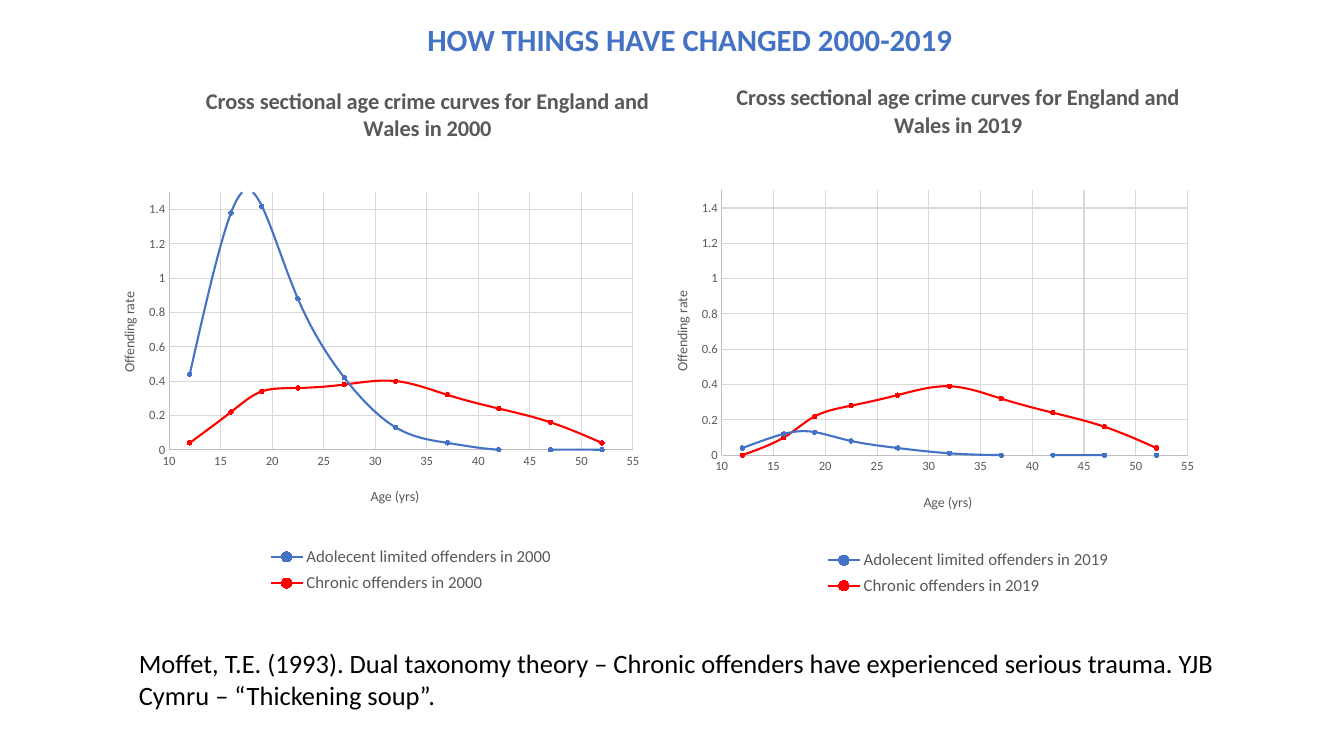
from dataclasses import dataclass

from pptx import Presentation
from pptx.chart.data import XyChartData
from pptx.dml.color import RGBColor
from pptx.enum.chart import XL_CHART_TYPE, XL_LEGEND_POSITION, XL_MARKER_STYLE, XL_TICK_MARK
from pptx.oxml import parse_xml
from pptx.oxml.ns import nsdecls
from pptx.util import Cm, Pt

SMOOTH_SCATTER = XL_CHART_TYPE.XY_SCATTER_SMOOTH
LEGEND_BOTTOM = XL_LEGEND_POSITION.BOTTOM
CIRCLE = XL_MARKER_STYLE.CIRCLE
NO_TICK = XL_TICK_MARK.NONE

FONT = "Calibri"
BLUE, RED, BLACK = "4472C4", "FF0000", "000000"
GREY, AXIS_GREY, GRID_GREY = "595959", "BFBFBF", "D9D9D9"
AGES = (12, 16, 19, 22.5, 27, 32, 37, 42, 47, 52)


@dataclass
class AgeCrimeChart:
    """Box is in cm; the layouts are fractions of the chart area."""
    year: int
    box: tuple
    adolescent: tuple
    chronic: tuple
    plot: tuple
    title: tuple
    age_title: tuple
    rate_title: tuple
    legend: tuple


@dataclass
class TextBox:
    text: str
    box: tuple
    size: float
    color: str
    bold: bool = False
    space_after: float = 0


CHARTS = (
    AgeCrimeChart(
        2000, (2.34, 1.78, 14.45, 13.46),
        (0.44, 1.38, 1.42, 0.88, 0.42, 0.13, 0.04, 0, 0, 0),
        (0.04, 0.22, 0.34, 0.36, 0.38, 0.4, 0.32, 0.24, 0.16, 0.04),
        plot=(0.133, 0.228, 0.809, 0.482), title=(0.19, 0.02),
        age_title=(0.48, 0.775), rate_title=(0.043, 0.41),
        legend=(0.295, 0.88, 0.52, 0.11)),
    AgeCrimeChart(
        2019, (15.93, 1.7, 14.86, 13.59),
        (0.04, 0.12, 0.13, 0.08, 0.04, 0.01, 0, 0, 0, 0),
        (0, 0.1, 0.22, 0.28, 0.34, 0.39, 0.32, 0.24, 0.16, 0.04),
        plot=(0.152, 0.228, 0.79, 0.491), title=(0.17, 0.02),
        age_title=(0.49, 0.784), rate_title=(0.065, 0.41),
        legend=(0.31, 0.885, 0.52, 0.105)),
)
SOURCE = TextBox(
    "Moffet, T.E. (1993). Dual taxonomy theory – Chronic offenders have experienced "
    "serious trauma. YJB Cymru – “Thickening soup”.",
    (3.25, 16.18, 28.3, 1.88), 18.9, BLACK, space_after=6)
HEADING = TextBox("HOW THINGS HAVE CHANGED 2000-2019",
                  (10.52, 0.41, 14.86, 1.19), 22, BLUE, bold=True)


def rgb(color: str) -> RGBColor:
    return RGBColor.from_string(color)


def set_font(font, size: float, color: str, bold: bool = False) -> None:
    font.name = FONT
    font.size = Pt(size)
    font.bold = bold
    font.color.rgb = rgb(color)


def set_line(fmt, color: str, width: float) -> None:
    fmt.line.color.rgb = rgb(color)
    fmt.line.width = Pt(width)


def set_layout(element, layout: tuple, inner: bool = False) -> None:
    """Place a chart part by x, y and, where given, width and height."""
    for old in element.xpath("c:layout"):
        element.remove(old)
    target = '<c:layoutTarget val="inner"/>' if inner else ""
    modes = '<c:xMode val="edge"/><c:yMode val="edge"/>'
    sizes = "".join(f'<c:{k} val="{v}"/>' for k, v in zip("xywh", layout))
    new = parse_xml(f'<c:layout {nsdecls("c")}><c:manualLayout>{target}{modes}{sizes}'
                    '</c:manualLayout></c:layout>')
    overlay = element.xpath("c:overlay")
    if overlay:
        overlay[0].addprevious(new)
    else:
        element.insert(0, new)


def set_title(title, text: str, size: float, layout: tuple, bold: bool = False) -> None:
    r = title.text_frame.paragraphs[0].add_run()
    r.text = text
    set_font(r.font, size, GREY, bold)
    set_layout(title.element, layout)


def style_axis(axis, title: str, layout: tuple, low: float, high: float, step: float) -> None:
    axis.minimum_scale, axis.maximum_scale, axis.major_unit = low, high, step
    axis.major_tick_mark = axis.minor_tick_mark = NO_TICK
    axis.has_major_gridlines = True
    set_line(axis.major_gridlines.format, GRID_GREY, 0.75)
    set_line(axis.format, AXIS_GREY, 0.75)
    labels = axis.tick_labels
    labels.number_format, labels.number_format_is_linked = "General", False
    set_font(labels.font, 9, GREY)
    set_title(axis.axis_title, title, 10, layout)


def add_age_crime_chart(s, c: AgeCrimeChart) -> None:
    data = XyChartData()
    for group, rates in (("Adolecent limited", c.adolescent), ("Chronic", c.chronic)):
        series = data.add_series(f"{group} offenders in {c.year}")
        for age, rate in zip(AGES, rates):
            series.add_data_point(age, rate)
    chart = s.shapes.add_chart(SMOOTH_SCATTER, *map(Cm, c.box), data).chart
    set_font(chart.font, 10, BLACK)

    plot = chart.plots[0]
    plot.vary_by_categories = False
    for series, color in zip(plot.series, (BLUE, RED)):
        set_line(series.format, color, 1.5)
        marker = series.marker
        marker.style, marker.size = CIRCLE, 3
        marker.format.fill.solid()
        marker.format.fill.fore_color.rgb = rgb(color)
        set_line(marker.format, color, 0.75)
    for smooth in chart.element.xpath(".//c:ser/c:smooth"):
        smooth.set("val", "1")
    set_layout(chart.element.xpath(".//c:plotArea")[0], c.plot, inner=True)

    chart.has_title = True
    set_title(chart.chart_title,
              f"Cross sectional age crime curves for England and Wales in {c.year}",
              16, c.title, bold=True)
    style_axis(chart.category_axis, "Age (yrs)", c.age_title, 10, 55, 5)
    style_axis(chart.value_axis, "Offending rate", c.rate_title, 0, 1.5, 0.2)

    chart.has_legend = True
    chart.legend.position = LEGEND_BOTTOM
    chart.legend.include_in_layout = False
    set_font(chart.legend.font, 12, GREY)
    set_layout(chart.element.xpath(".//c:legend")[0], c.legend)


def add_text(s, t: TextBox) -> None:
    tf = s.shapes.add_textbox(*map(Cm, t.box)).text_frame
    tf.word_wrap = True
    p = tf.paragraphs[0]
    p.space_after = Pt(t.space_after)
    r = p.add_run()
    r.text = t.text
    set_font(r.font, t.size, t.color, t.bold)


def main() -> None:
    prs = Presentation()
    prs.slide_width, prs.slide_height = Cm(33.87), Cm(19.05)
    s = prs.slides.add_slide(prs.slide_layouts[6])
    for chart in CHARTS:
        add_age_crime_chart(s, chart)
    for text in (SOURCE, HEADING):
        add_text(s, text)
    prs.save("out.pptx")


if __name__ == "__main__":
    main()
